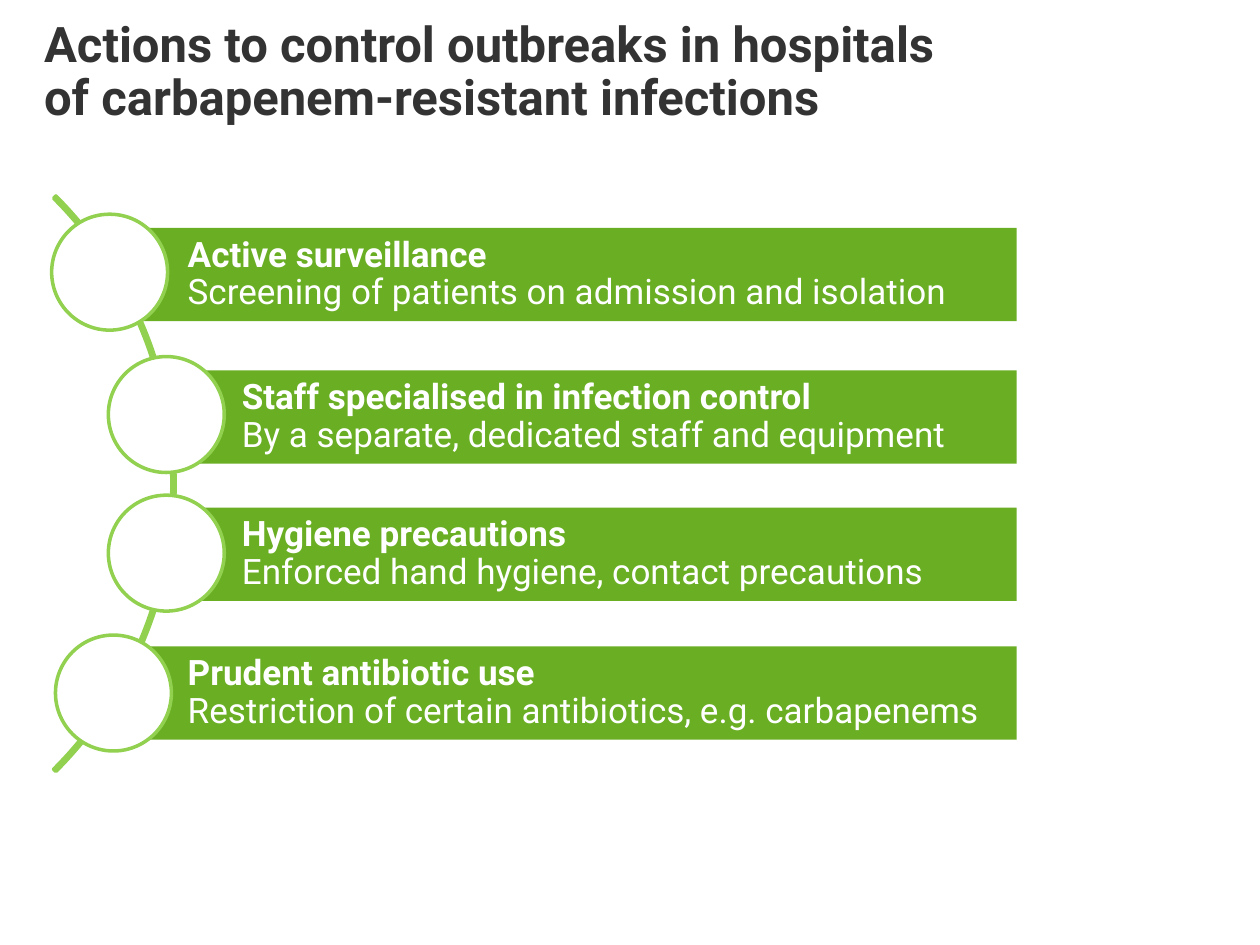
from dataclasses import dataclass

from pptx import Presentation
from pptx.dml.color import RGBColor
from pptx.enum.shapes import MSO_SHAPE as Preset
from pptx.enum.text import MSO_ANCHOR as Anchor, PP_ALIGN as Align
from pptx.shapes.autoshape import Shape
from pptx.slide import Slide
from pptx.text.text import _Paragraph as Paragraph
from pptx.util import Inches, Pt

WHITE = RGBColor(0xFF, 0xFF, 0xFF)
CHARCOAL = RGBColor(0x33, 0x33, 0x33)
GREEN = RGBColor(0x69, 0xAE, 0x23)
LIME = RGBColor(0x92, 0xD0, 0x50)

BAR_RIGHT = 8.07
BAR_HEIGHT = 0.74
CIRCLE_SIZE = 0.92


@dataclass
class Action:
    heading: str
    detail: str
    bar_left: float
    bar_top: float
    circle_left: float
    circle_top: float


ACTIONS = [
    Action("Active surveillance",
           "Screening of patients on admission and isolation",
           0.9, 1.81, 0.41, 1.7),
    Action("Staff specialised in infection control",
           "By a separate, dedicated staff and equipment",
           1.33, 2.94, 0.86, 2.83),
    Action("Hygiene precautions",
           "Enforced hand hygiene, contact precautions",
           1.33, 4.03, 0.86, 3.93),
    Action("Prudent antibiotic use",
           "Restriction of certain antibiotics, e.g. carbapenems",
           0.9, 5.13, 0.44, 5.04),
]


def style_paragraph(paragraph: Paragraph, size: int, color: RGBColor, bold: bool) -> None:
    paragraph.alignment = Align.LEFT
    paragraph.line_spacing = 0.9
    font = paragraph.font
    font.name = "Roboto"
    font.size = Pt(size)
    font.bold = bold
    font.color.rgb = color


def add_preset(slide: Slide, preset: Preset, left: float, top: float,
               width: float, height: float) -> Shape:
    shape = slide.shapes.add_shape(
        preset, Inches(left), Inches(top), Inches(width), Inches(height))
    shape.shadow.inherit = False
    return shape


def outline_in_lime(shape: Shape) -> None:
    shape.line.color.rgb = LIME
    shape.line.width = Pt(2)


def add_title(slide: Slide) -> None:
    title = slide.shapes.add_textbox(Inches(0.35), Inches(0.16), Inches(9), Inches(0.9))
    frame = title.text_frame
    frame.word_wrap = True
    frame.margin_left = frame.margin_right = frame.margin_top = frame.margin_bottom = 0
    heading = frame.paragraphs[0]
    heading.text = "Actions to control outbreaks in hospitals\vof carbapenem-resistant infections"
    style_paragraph(heading, 28, CHARCOAL, True)


def add_arc(slide: Slide) -> None:
    arc = add_preset(slide, Preset.BLOCK_ARC, -5.07, 0.61, 6.46, 6.46)
    for index, value in enumerate((189, 27, 0.004)):
        arc.adjustments[index] = value
    arc.fill.background()
    outline_in_lime(arc)


def add_action(slide: Slide, action: Action) -> None:
    bar = add_preset(slide, Preset.RECTANGLE, action.bar_left, action.bar_top,
                     BAR_RIGHT - action.bar_left, BAR_HEIGHT)
    bar.fill.solid()
    bar.fill.fore_color.rgb = GREEN
    bar.line.fill.background()
    frame = bar.text_frame
    frame.word_wrap = True
    frame.vertical_anchor = Anchor.MIDDLE
    frame.margin_left = Inches(0.59)
    frame.margin_right = frame.margin_top = frame.margin_bottom = Inches(0.06)
    frame.text = f"{action.heading}\n{action.detail}"
    for paragraph, bold in zip(frame.paragraphs, (True, False)):
        style_paragraph(paragraph, 20, WHITE, bold)

    circle = add_preset(slide, Preset.OVAL, action.circle_left, action.circle_top,
                        CIRCLE_SIZE, CIRCLE_SIZE)
    circle.fill.solid()
    circle.fill.fore_color.rgb = WHITE
    outline_in_lime(circle)


def main() -> None:
    presentation = Presentation()
    presentation.slide_width = Inches(10)
    presentation.slide_height = Inches(7.5)
    slide = presentation.slides.add_slide(presentation.slide_layouts[6])
    add_title(slide)
    add_arc(slide)
    for action in ACTIONS:
        add_action(slide, action)
    presentation.save("out.pptx")


if __name__ == "__main__":
    main()
